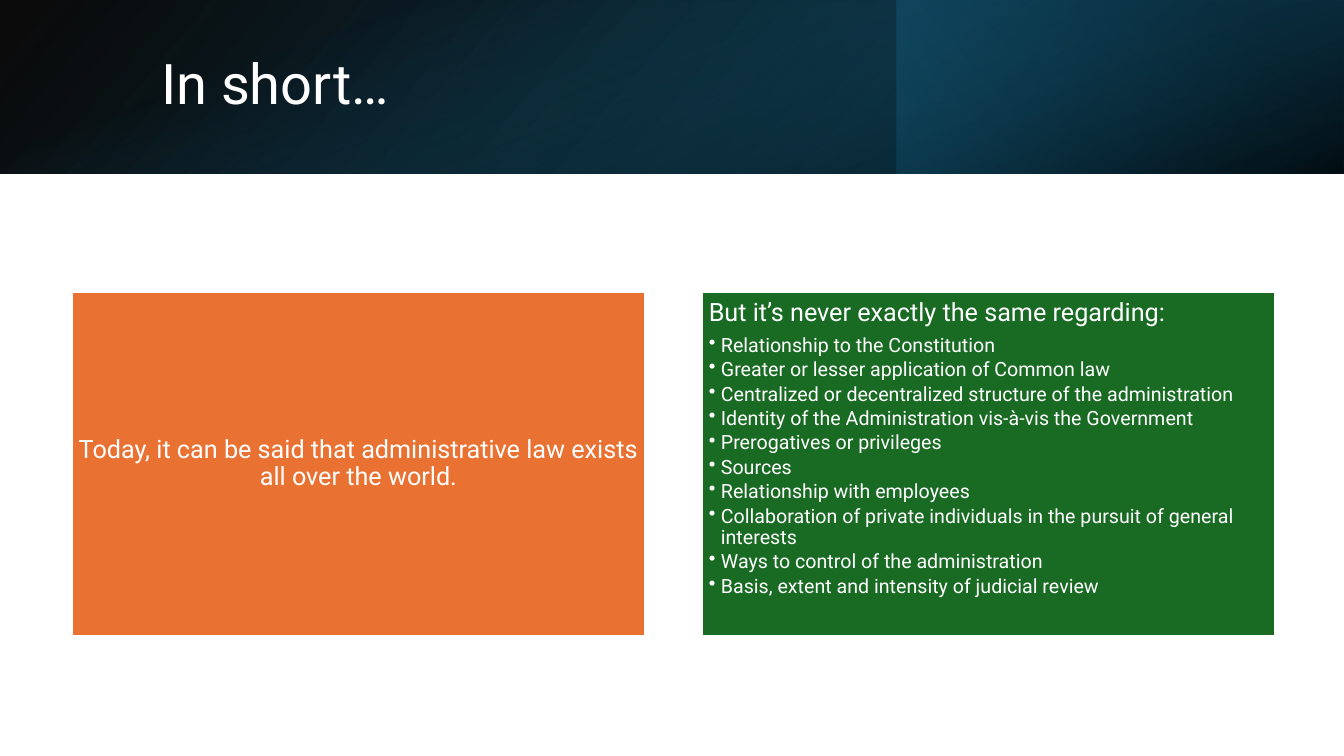
"""Builds the closing slide on administrative law: a dark banner and two panels."""
from lxml import etree
from pptx import Presentation
from pptx import util as u
from pptx.dml.color import RGBColor
from pptx.enum import shapes, text
from pptx.oxml.ns import qn

HUES = {"white": "FFFFFF", "black": "000000", "navy": "104862", "deep": "0B3041",
        "teal": "156082", "orange": "E97132", "green": "196B24"}
POINTS = [
    "Relationship to the Constitution",
    "Greater or lesser application of Common law",
    "Centralized or decentralized structure of the administration",
    "Identity of the Administration vis-à-vis the Government",
    "Prerogatives or privileges",
    "Sources",
    "Relationship with employees",
    "Collaboration of private individuals in the pursuit of general interests",
    "Ways to control of the administration",
    "Basis, extent and intensity of judicial review",
]
PANELS = [
    (0.71, "orange", text.MSO_ANCHOR.MIDDLE, text.PP_ALIGN.CENTER,
     "Today, it can be said that administrative law exists all over the world.", []),
    (6.96, "green", text.MSO_ANCHOR.TOP, text.PP_ALIGN.LEFT,
     "But it’s never exactly the same regarding:", POINTS),
]
BANDS = [
    ((0, 0, 13.33, 1.72), 0, True, 140, [(0, "black", 96), (100, "navy", 100)]),
    ((8.89, 0, 4.44, 1.72), 180, False, 320, [(19, "deep", 68), (100, "teal", 79)]),
    ((5.8, -5.8, 1.72, 13.33), 90, False, 340, [(23, "teal", 0), (99, "black", 74)]),
]


def add_rect(box):
    rect = slide.shapes.add_shape(shapes.MSO_SHAPE.RECTANGLE, *map(u.Inches, box))
    rect.shadow.inherit = False
    return rect


def style(para, size, after=0):
    para.line_spacing = 0.9
    para.space_after = u.Pt(after)
    for run in para.runs:
        run.font.size = u.Pt(size)
        run.font.name = "Roboto"
        run.font.color.rgb = RGBColor.from_string(HUES["white"])


deck = Presentation()
deck.slide_width, deck.slide_height = u.Inches(13.33), u.Inches(7.5)
slide = deck.slides.add_slide(deck.slide_layouts[6])

for box, turn, flip, angle, stops in BANDS:
    band = add_rect(box)
    band.rotation = turn
    band.line.fill.background()
    if flip:
        band._element.spPr.find(qn("a:xfrm")).set("flipH", "1")
    band.fill.gradient()
    grad = band._element.spPr.find(qn("a:gradFill"))
    grad.set("rotWithShape", "1")
    grad.find(qn("a:lin")).set("ang", str(angle * 60000))
    slots = grad.find(qn("a:gsLst"))
    for old in list(slots):
        slots.remove(old)
    for pos, hue, alpha in stops:
        stop = etree.SubElement(slots, qn("a:gs"), pos=str(pos * 1000))
        tint = etree.SubElement(stop, qn("a:srgbClr"), val=HUES[hue])
        etree.SubElement(tint, qn("a:alpha"), val=str(alpha * 1000))

title = slide.shapes.add_textbox(*map(u.Inches, (1.5, 0.38, 10.98, 0.96))).text_frame
title.word_wrap = True
title.vertical_anchor = text.MSO_ANCHOR.MIDDLE
title.text = "In short…"
style(title.paragraphs[0], 40)

for left, hue, anchor, align, lead, items in PANELS:
    panel = add_rect((left, 2.9, 5.69, 3.41))
    panel.fill.solid()
    panel.fill.fore_color.rgb = RGBColor.from_string(HUES[hue])
    panel.line.color.rgb = RGBColor.from_string(HUES["white"])
    panel.line.width = u.Pt(1.5)
    frame = panel.text_frame
    frame.word_wrap = True
    frame.vertical_anchor = anchor
    frame.margin_left = frame.margin_right = u.Inches(0.07)
    frame.margin_top = frame.margin_bottom = u.Inches(0.07)
    frame.text = lead
    frame.paragraphs[0].alignment = align
    style(frame.paragraphs[0], 18, 6.3)
    for item in items:
        para = frame.add_paragraph()
        para.text = item
        para.level = 1
        para.alignment = align
        style(para, 14, 2.3)
        props = para._p.get_or_add_pPr()
        props.set("marL", str(u.Inches(0.12)))
        props.set("indent", str(-u.Inches(0.12)))
        etree.SubElement(props, qn("a:buChar"), char="•")

deck.save("out.pptx")
